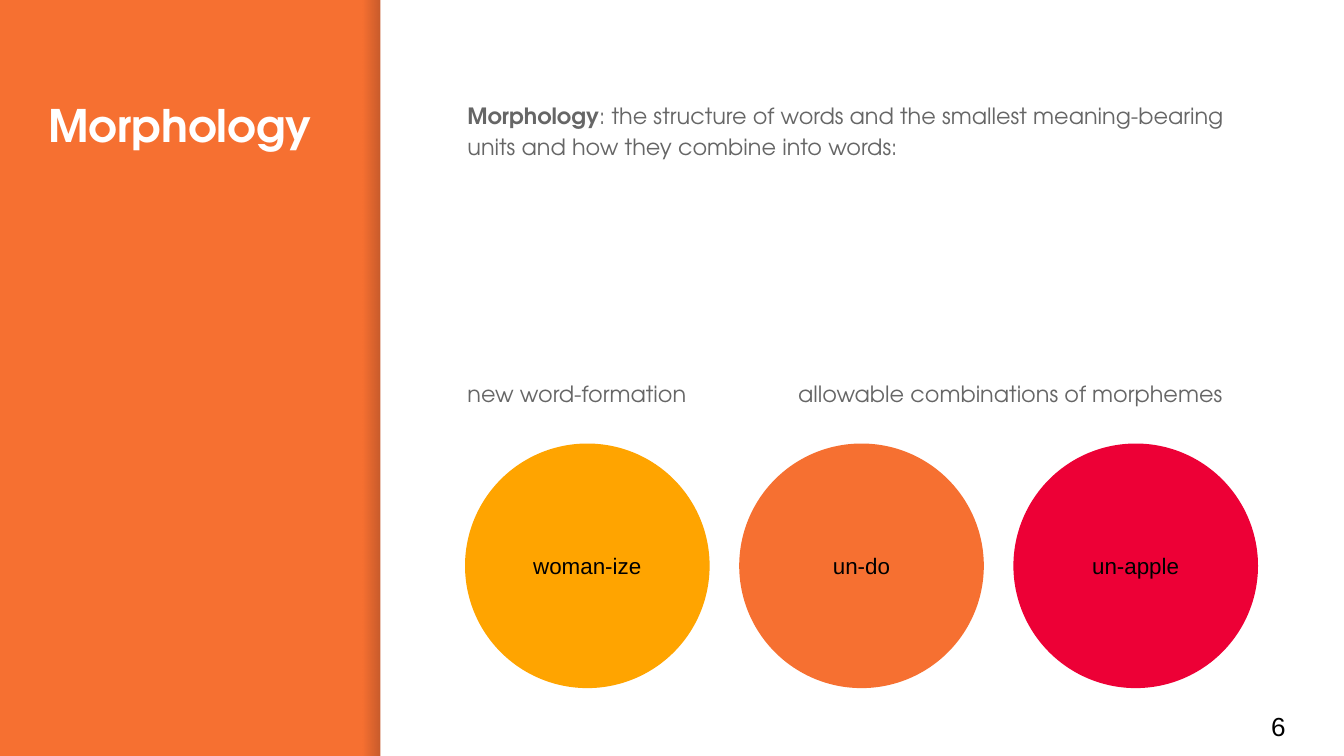
from dataclasses import dataclass

from lxml.etree import SubElement
from pptx import Presentation
from pptx.dml.color import RGBColor
from pptx.enum.shapes import MSO_SHAPE as Shape
from pptx.enum.text import MSO_ANCHOR as Anchor, MSO_AUTO_SIZE as AutoSize, PP_ALIGN as Align
from pptx.oxml.ns import qn
from pptx.util import Inches, Pt


@dataclass(frozen=True)
class Theme:
    orange: str = "F67031"
    amber: str = "FFA400"
    red: str = "ED0036"
    white: str = "FFFFFF"
    grey: str = "666666"
    black: str = "000000"
    shade: str = "000014"
    display: str = "TeX Gyre Adventor"
    plain: str = "Arial"
    title_size: int = 24
    text_size: int = 12
    number_size: int = 14


@dataclass(frozen=True)
class Example:
    word: str
    color: str


THEME = Theme()
WIDTH = 10
HEIGHT = WIDTH * 9 / 16
PANEL_LEFT = 2.83
SHADE_WIDTH = 0.13
CIRCLE_SIZE, CIRCLE_PITCH = 1.82, 2.04
CIRCLE_LEFT, CIRCLE_TOP = 3.46, 3.3
EXAMPLES = (
    Example("woman-ize", THEME.amber),
    Example("un-do", THEME.orange),
    Example("un-apple", THEME.red),
)


def style_runs(paragraph, font: str, size: int, color: str, bold: bool = False) -> None:
    for run in paragraph.runs:
        run.font.name = font
        run.font.size = Pt(size)
        run.font.bold = bold
        run.font.color.rgb = RGBColor.from_string(color)


def prepare_frame(frame, anchor=Anchor.TOP) -> None:
    frame.word_wrap = True
    frame.auto_size = AutoSize.NONE
    frame.vertical_anchor = anchor
    frame.margin_left = frame.margin_right = Inches(0.1)
    frame.margin_top = frame.margin_bottom = Inches(0.1)


def add_filled(slide, kind, left: float, top: float, width: float, height: float, color: str):
    shape = slide.shapes.add_shape(kind, Inches(left), Inches(top), Inches(width), Inches(height))
    shape.shadow.inherit = False
    shape.fill.solid()
    shape.fill.fore_color.rgb = RGBColor.from_string(color)
    shape.line.fill.background()
    return shape


def add_edge_shade(slide) -> None:
    """Darken the sidebar towards the edge of the white panel."""
    left = PANEL_LEFT - SHADE_WIDTH
    shade = add_filled(slide, Shape.RECTANGLE, left, 0, SHADE_WIDTH, HEIGHT, THEME.shade)
    shade.fill.gradient()
    shade.fill.gradient_angle = 0
    for stop in shade.fill.gradient_stops:
        stop.color.rgb = RGBColor.from_string(THEME.shade)
    for color, opacity in zip(shade.element.iter(qn("a:srgbClr")), (0, 20)):
        SubElement(color, qn("a:alpha"), val=str(opacity * 1000))


def add_title(slide, text: str) -> None:
    title = slide.shapes.title
    title.left, title.top = Inches(0.26), Inches(0.63)
    title.width, title.height = Inches(2.24), Inches(4.35)
    prepare_frame(title.text_frame)
    title.text_frame.text = text
    heading = title.text_frame.paragraphs[0]
    heading.alignment = Align.LEFT
    style_runs(heading, THEME.display, THEME.title_size, THEME.white, bold=True)


def add_definition(slide) -> None:
    box = slide.shapes.add_textbox(Inches(3.38), Inches(0.63), Inches(6.12), Inches(3.02))
    frame = box.text_frame
    prepare_frame(frame)
    definition = frame.paragraphs[0]
    term = definition.add_run()
    term.text = "Morphology"
    definition.add_run().text = (
        ": the structure of words and the smallest meaning-bearing units "
        "and how they combine into words:"
    )

    captions = frame.add_paragraph()
    captions.text = "new word-formation\tallowable combinations of morphemes"
    captions.space_before = Pt(116)

    for paragraph in frame.paragraphs:
        paragraph.line_spacing = 1.15
        style_runs(paragraph, THEME.display, THEME.text_size, THEME.grey)
    term.font.bold = True
    tabs = SubElement(captions._p.get_or_add_pPr(), qn("a:tabLst"))
    SubElement(tabs, qn("a:tab"), pos=str(Inches(2.46)), algn="l")


def add_example(slide, example: Example, column: int) -> None:
    left = CIRCLE_LEFT + column * CIRCLE_PITCH
    circle = add_filled(slide, Shape.OVAL, left, CIRCLE_TOP, CIRCLE_SIZE, CIRCLE_SIZE, example.color)
    prepare_frame(circle.text_frame, Anchor.MIDDLE)
    circle.text_frame.text = example.word
    word = circle.text_frame.paragraphs[0]
    word.alignment = Align.CENTER
    style_runs(word, THEME.plain, THEME.text_size, THEME.black)


def add_page_number(slide, number: str) -> None:
    box = slide.shapes.add_textbox(Inches(9.36), Inches(5.19), Inches(0.6), Inches(0.43))
    prepare_frame(box.text_frame, Anchor.MIDDLE)
    box.text_frame.text = number
    style_runs(box.text_frame.paragraphs[0], THEME.plain, THEME.number_size, THEME.black)


def main() -> None:
    deck = Presentation()
    deck.slide_width, deck.slide_height = Inches(WIDTH), Inches(HEIGHT)
    slide = deck.slides.add_slide(deck.slide_layouts[5])
    slide.background.fill.solid()
    slide.background.fill.fore_color.rgb = RGBColor.from_string(THEME.orange)

    add_edge_shade(slide)
    add_filled(slide, Shape.RECTANGLE, PANEL_LEFT, 0, WIDTH - PANEL_LEFT, HEIGHT, THEME.white)
    add_title(slide, "Morphology")
    add_definition(slide)
    add_page_number(slide, "6")
    for column, example in enumerate(EXAMPLES):
        add_example(slide, example, column)
    deck.save("out.pptx")


if __name__ == "__main__":
    main()
